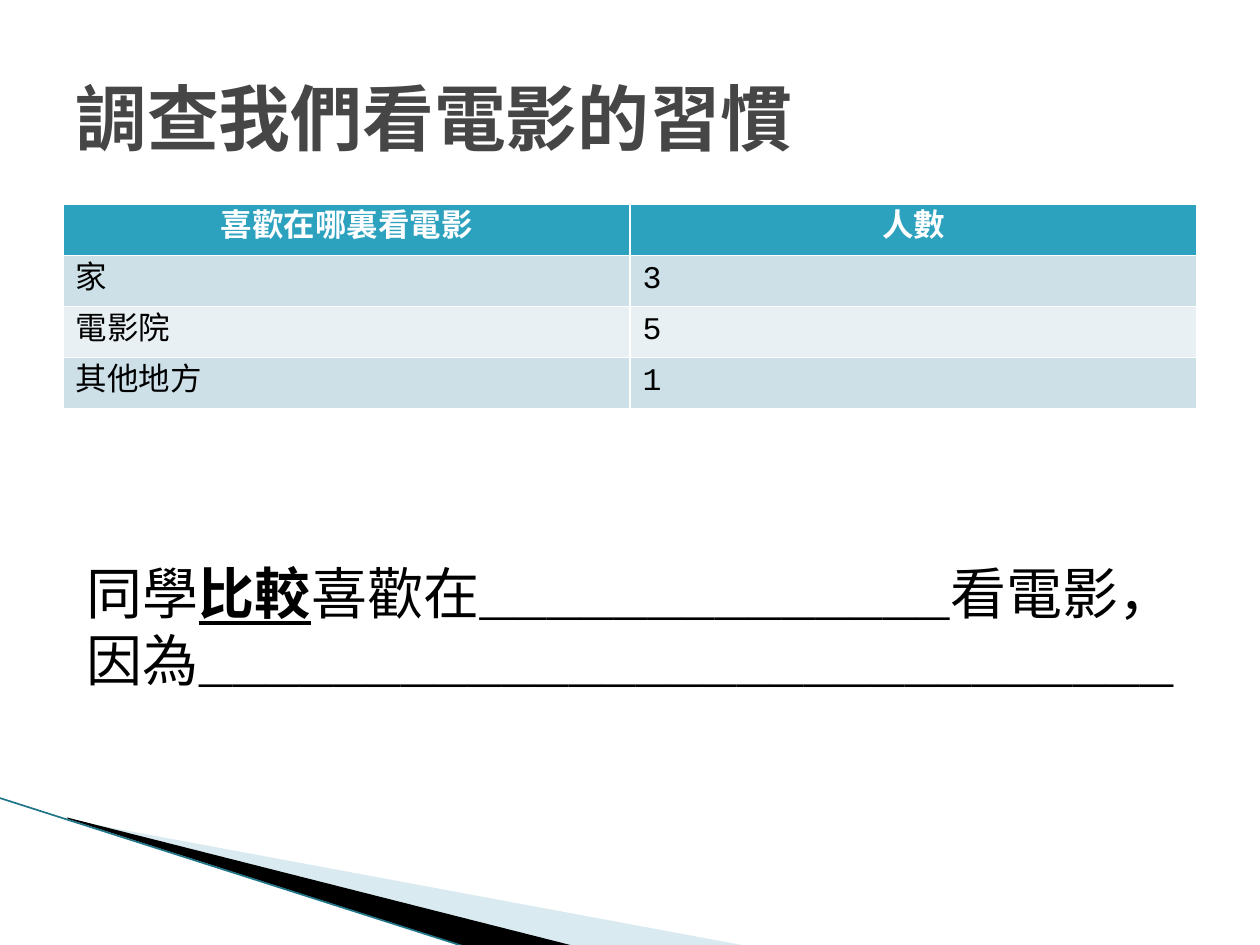
"""Build a slide with a class survey of film-watching habits."""
from lxml import etree
from pptx import Presentation
from pptx import util as u
from pptx.dml.color import RGBColor
from pptx.enum import shapes, text
from pptx.oxml.ns import qn

FONT = "Courier New"
WHITE = RGBColor(0xFF, 0xFF, 0xFF)
BLACK = RGBColor(0, 0, 0)
GREY = RGBColor(0x46, 0x46, 0x46)
TEAL = RGBColor(0x2D, 0xA2, 0xBF)
DARK_TEAL = RGBColor(0x1F, 0x74, 0x88)
PALE_BLUE = RGBColor(0xA0, 0xCB, 0xDC)
BAND_DARK = RGBColor(0xCD, 0xE0, 0xE8)
BAND_LIGHT = RGBColor(0xE8, 0xF0, 0xF4)


def style(run, size, color, bold=False):
    run.font.size = u.Pt(size)
    run.font.bold = bold
    run.font.color.rgb = color
    run.font.name = FONT
    etree.SubElement(run.font._element, qn("a:ea")).set("typeface", FONT)


def wedge(points, color):
    corners = [(u.Cm(x), u.Cm(y)) for x, y in points]
    builder = slide.shapes.build_freeform(*corners[0])
    builder.add_line_segments(corners[1:], close=True)
    shape = builder.convert_to_shape()
    shape.shadow.inherit = False
    shape.fill.solid()
    shape.fill.fore_color.rgb = color
    shape.line.fill.background()
    return shape


prs = Presentation()
prs.slide_width, prs.slide_height = u.Cm(25.4), u.Cm(19.05)
slide = prs.slides.add_slide(prs.slide_layouts[6])

pale_wedge = wedge([(1.4, 16.53), (15.11, 19.08), (11.58, 19.08), (1.4, 16.51)], PALE_BLUE)
pale_color = pale_wedge.fill._xPr.find(qn("a:solidFill"))[0]
etree.SubElement(pale_color, qn("a:alpha")).set("val", "40000")
wedge([(1.35, 16.48), (11.61, 19.08), (9.45, 19.1), (1.37, 16.51)], BLACK)

edge = slide.shapes.add_connector(
    shapes.MSO_CONNECTOR.STRAIGHT, u.Cm(-0.03), u.Cm(16.08), u.Cm(9.42), u.Cm(19.1))
edge.line.color.rgb = DARK_TEAL
edge.line.width = u.Pt(0.95)
etree.SubElement(edge._element.spPr, qn("a:effectLst"))

survey = [
    ("喜歡在哪裏看電影", "人數"),
    ("家", "3"),
    ("電影院", "5"),
    ("其他地方", "1"),
]
table = slide.shapes.add_table(
    len(survey), 2, u.Cm(1.27), u.Cm(4.12), u.Cm(22.86), u.Cm(4.12)).table
for row, answers in enumerate(survey):
    for col, answer in enumerate(answers):
        cell = table.cell(row, col)
        cell.text_frame.text = answer
        paragraph = cell.text_frame.paragraphs[0]
        cell.fill.solid()
        if row == 0:
            cell.fill.fore_color.rgb = TEAL
            paragraph.alignment = text.PP_ALIGN.CENTER
            style(paragraph.runs[0], 18, WHITE, True)
        else:
            cell.fill.fore_color.rgb = BAND_DARK if row % 2 else BAND_LIGHT
            style(paragraph.runs[0], 18, BLACK)

title = slide.shapes.add_textbox(u.Cm(1.27), u.Cm(0.76), u.Cm(22.86), u.Cm(3.18)).text_frame
title.word_wrap = True
title.vertical_anchor = text.MSO_ANCHOR.MIDDLE
title.text = "調查我們看電影的習慣"
style(title.paragraphs[0].runs[0], 41, GREY, True)

sentence = slide.shapes.add_textbox(u.Cm(1.5), u.Cm(11.13), u.Cm(22.81), u.Cm(3)).text_frame
sentence.word_wrap = True
sentence.auto_size = text.MSO_AUTO_SIZE.SHAPE_TO_FIT_TEXT
opening = sentence.paragraphs[0]
for words in ("同學", "比較", "喜歡在" + "_" * 14 + "看電影，"):
    run = opening.add_run()
    run.text = words
    style(run, 32, BLACK, words == "比較")
    run.font.underline = words == "比較"
reason = sentence.add_paragraph()
reason.text = "因為" + "_" * 29
style(reason.runs[0], 32, BLACK)

prs.save("out.pptx")
